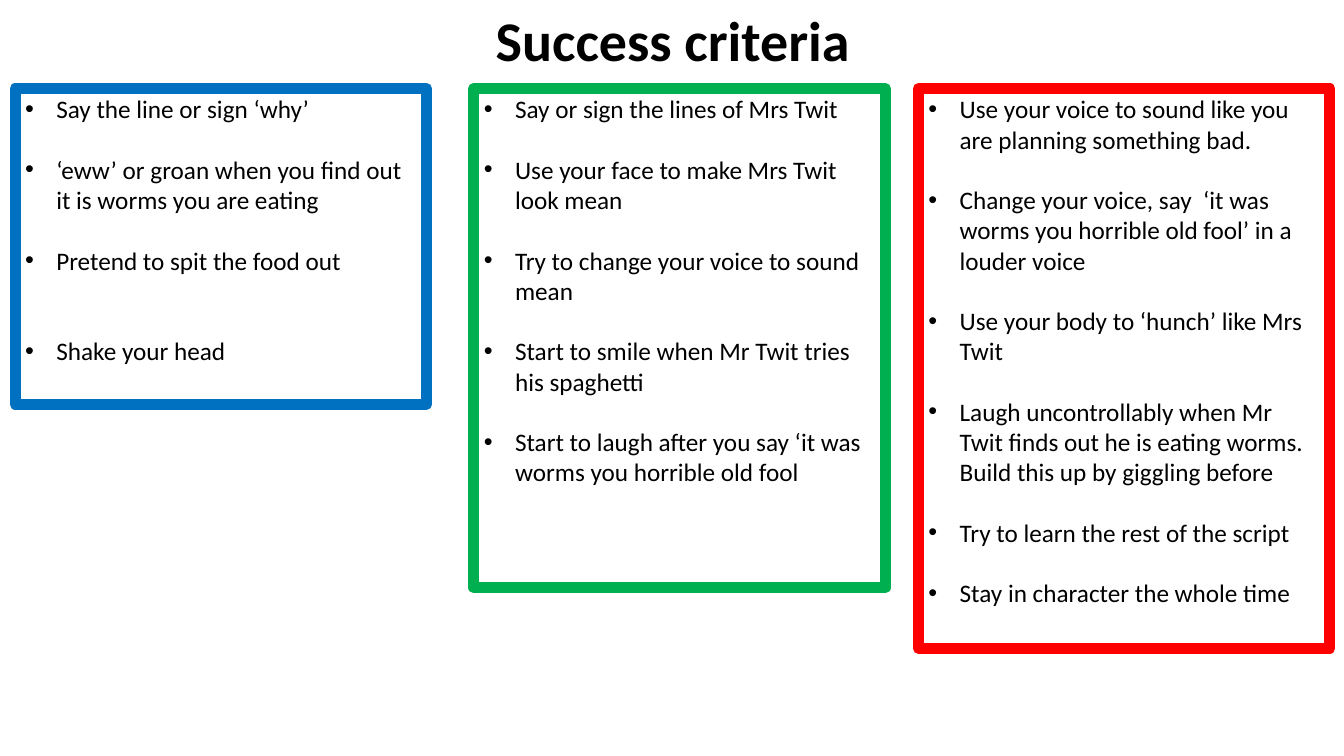
import pptx
import pptx.dml.color
import pptx.enum.text
import pptx.oxml.ns
import pptx.util
from dataclasses import dataclass
from lxml import etree

PX = 9144  # EMU per px, 100 px to the inch


@dataclass(frozen=True)
class Theme:
    font: str = "Calibri"
    ink: str = "000000"
    blue: str = "0070C0"
    green: str = "00B050"
    red: str = "FF0000"
    title: int = 40
    body: int = 18
    gap: float = 21.6  # one line of body text
    edge: int = 8


THEME = Theme()
TOP, WIDE = 88, 408  # shared by all three boxes

# Left, height, colour, then the criteria with the lines left free above each
BOXES = [
    (15, 313, THEME.blue, [
        ("Say the line or sign ‘why’", 0),
        ("‘eww’ or groan when you find out it is worms you are eating", 1),
        ("Pretend to spit the food out", 1),
        ("Shake your head", 2),
    ]),
    (470, 495, THEME.green, [
        ("Say or sign the lines of Mrs Twit", 0),
        ("Use your face to make Mrs Twit look mean", 1),
        ("Try to change your voice to sound mean", 1),
        ("Start to smile when Mr Twit tries his spaghetti", 1),
        ("Start to laugh after you say ‘it was worms you horrible old fool", 1),
    ]),
    (911, 555, THEME.red, [
        ("Use your voice to sound like you are planning something bad.", 0),
        ("Change your voice, say  ‘it was worms you horrible old fool’ in a louder voice", 1),
        ("Use your body to ‘hunch’ like Mrs Twit", 1),
        ("Laugh uncontrollably when Mr Twit finds out he is eating worms. "
         "Build this up by giggling before", 1),
        ("Try to learn the rest of the script", 1),
        ("Stay in character the whole time", 1),
    ]),
]


def px(*sizes):
    return [pptx.util.Emu(size * PX) for size in sizes]


def tint(code):
    return pptx.dml.color.RGBColor.from_string(code)


def style(para, size, bold=False):
    font = para.font
    font.name, font.size, font.bold = THEME.font, pptx.util.Pt(size), bold
    font.color.rgb = tint(THEME.ink)


def frame(shape):
    text = shape.text_frame
    text.word_wrap = True
    text.auto_size = pptx.enum.text.MSO_AUTO_SIZE.NONE
    text.vertical_anchor = pptx.enum.text.MSO_ANCHOR.TOP
    return text


def bullet(para):
    props = para._p.get_or_add_pPr()
    indent = px(31)[0]
    props.set("marL", str(indent))
    props.set("indent", str(-indent))
    qn = pptx.oxml.ns.qn
    etree.SubElement(props, qn("a:buFont"), typeface="Arial")
    etree.SubElement(props, qn("a:buChar"), char="•")


def head(slide, words):
    title = slide.shapes.title
    title.left, title.top, title.width, title.height = px(408, 0, 531, 77)
    para = frame(title).paragraphs[0]
    para.text = words
    para.alignment = pptx.enum.text.PP_ALIGN.CENTER
    style(para, THEME.title, bold=True)


def box(slide, left, high, code, items):
    shape = slide.shapes.add_textbox(*px(left, TOP, WIDE, high))
    shape.line.color.rgb = tint(code)
    shape.line.width = pptx.util.Pt(THEME.edge)
    text = frame(shape)
    for i, (words, free) in enumerate(items):
        para = text.add_paragraph() if i else text.paragraphs[0]
        para.text = words
        bullet(para)
        para.space_before = pptx.util.Pt(free * THEME.gap)
        style(para, THEME.body)


def main():
    deck = pptx.Presentation()
    deck.slide_width, deck.slide_height = px(1333, 750)
    slide = deck.slides.add_slide(deck.slide_layouts[5])

    # Heading
    head(slide, "Success criteria ")

    # One framed list per level
    for spec in BOXES:
        box(slide, *spec)

    deck.save("out.pptx")


if __name__ == "__main__":
    main()
